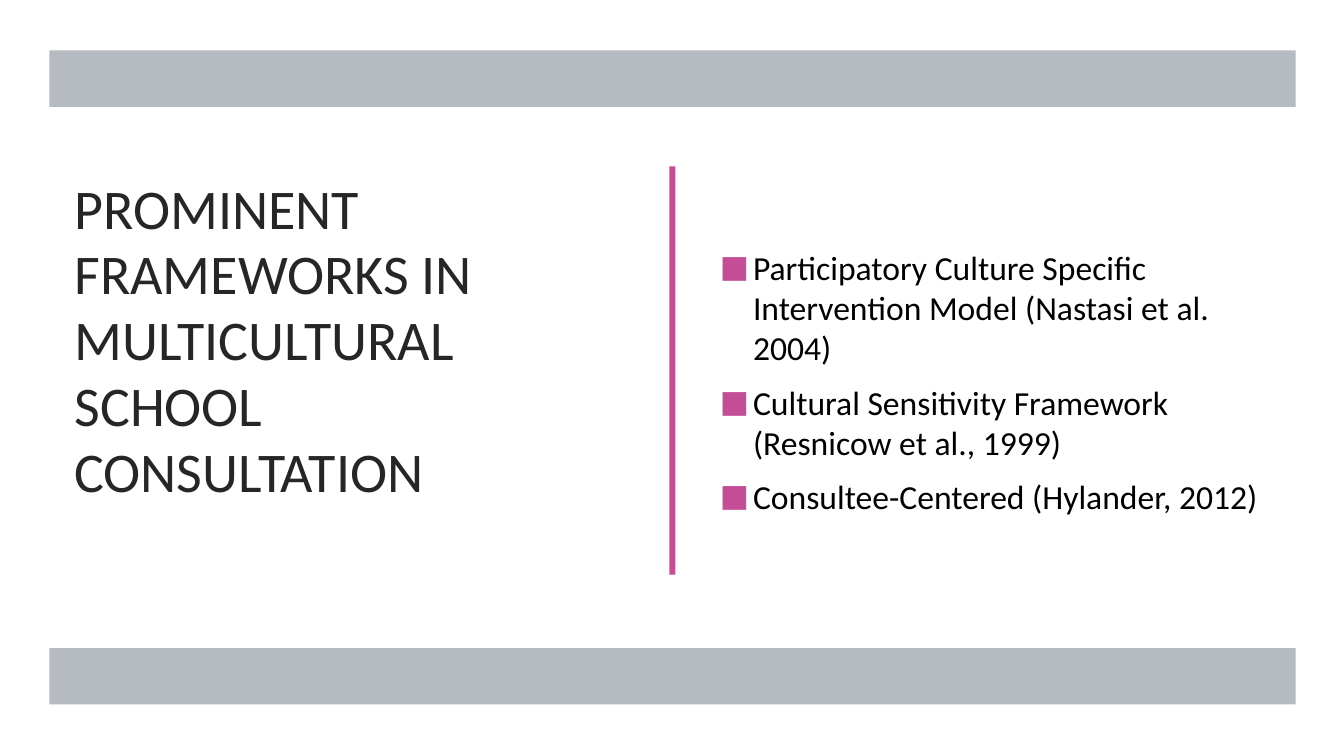
from lxml import etree
from pptx import Presentation
from pptx.dml.color import RGBColor
from pptx.enum.shapes import MSO_SHAPE
from pptx.enum.text import MSO_ANCHOR, PP_ALIGN
from pptx.oxml.ns import qn
from pptx.util import Pt

EMU_PER_PX = 9144
SLIDE_WIDTH, SLIDE_HEIGHT = 1333, 750
RECTANGLE = MSO_SHAPE.RECTANGLE
TOP, MIDDLE = MSO_ANCHOR.TOP, MSO_ANCHOR.MIDDLE
LEFT = PP_ALIGN.LEFT

FONT = "Calibri"
WHITE, BLACK, CHARCOAL = "FFFFFF", "000000", "262626"
GREY, PINK = "969FA7", "C34D97"

TITLE = "PROMINENT FRAMEWORKS IN MULTICULTURAL SCHOOL CONSULTATION"
FRAMEWORKS = [
    "Participatory Culture Specific Intervention Model (Nastasi et al. 2004)",
    "Cultural Sensitivity Framework (Resnicow et al., 1999)",
    "Consultee-Centered (Hylander, 2012)",
]


def px(length):
    """Turn pixels into EMU."""
    return length * EMU_PER_PX


def color(hex_string):
    """Turn a hex string into a colour."""
    return RGBColor.from_string(hex_string)


def add_rectangle(slide, box, fill, opacity=100):
    """Draw a borderless rectangle with the given opacity in percent."""
    shape = slide.shapes.add_shape(RECTANGLE, *map(px, box))
    shape.shadow.inherit = False
    shape.fill.solid()
    shape.fill.fore_color.rgb = color(fill)
    shape.line.fill.background()
    if opacity < 100:
        fill_color = shape.fill._xPr.find(qn("a:solidFill"))[0]
        etree.SubElement(fill_color, qn("a:alpha"), val=str(opacity * 1000))


def add_text_frame(slide, box, anchor, inset_top):
    """Add a wrapping text box and return its text frame."""
    frame = slide.shapes.add_textbox(*map(px, box)).text_frame
    frame.word_wrap = True
    frame.vertical_anchor = anchor
    frame.margin_left = frame.margin_right = px(10)
    frame.margin_top, frame.margin_bottom = px(inset_top), px(5)
    return frame


def add_run(paragraph, text, size, fill):
    """Add one styled run to a paragraph."""
    paragraph.alignment = LEFT
    run = paragraph.add_run()
    run.text = text
    run.font.name = FONT
    run.font.size = Pt(size)
    run.font.color.rgb = color(fill)


def set_bullet(paragraph):
    """Give a paragraph a hanging pink square bullet."""
    properties = paragraph._p.get_or_add_pPr()
    properties.set("marL", str(px(33)))
    properties.set("indent", str(-px(33)))
    bullet_color = etree.SubElement(properties, qn("a:buClr"))
    etree.SubElement(bullet_color, qn("a:srgbClr"), val=PINK)
    etree.SubElement(properties, qn("a:buSzPct"), val="92000")
    etree.SubElement(properties, qn("a:buFont"), typeface=FONT)
    etree.SubElement(properties, qn("a:buChar"), char="■")


def add_title(slide, box):
    """Place the title in the left column."""
    paragraph = add_text_frame(slide, box, TOP, 10).paragraphs[0]
    paragraph.line_spacing = 0.98
    add_run(paragraph, TITLE, 40, CHARCOAL)


def add_framework_list(slide, box):
    """Place the bulleted frameworks in the right column."""
    frame = add_text_frame(slide, box, MIDDLE, 5)
    for index, framework in enumerate(FRAMEWORKS):
        paragraph = frame.add_paragraph() if index else frame.paragraphs[0]
        set_bullet(paragraph)
        paragraph.space_before = Pt(4 if index else 0)
        paragraph.space_after = Pt(6)
        add_run(paragraph, framework, 24, BLACK)


def add_bands(slide, box, band_height):
    """Draw a grey band along the top and bottom of the box."""
    left, top, width, height = box
    for band_top in (top, top + height - band_height):
        add_rectangle(slide, (left, band_top, width, band_height), GREY, 70)


def add_content(slide, box):
    """Place the title, divider and list side by side in the box."""
    left, top, width, height = box
    list_width = 565
    add_title(slide, (left, top, 555, height))
    add_rectangle(slide, (left + 600, top, 6, 405), PINK)
    add_framework_list(slide, (left + width - list_width, top, list_width, height))


def main():
    """Build and save the presentation."""
    presentation = Presentation()
    presentation.slide_width = px(SLIDE_WIDTH)
    presentation.slide_height = px(SLIDE_HEIGHT)
    slide = presentation.slides.add_slide(presentation.slide_layouts[6])
    slide.background.fill.solid()
    slide.background.fill.fore_color.rgb = color(WHITE)
    add_bands(slide, (49, 50, 1236, 649), 56)
    add_content(slide, (64, 165, 1205, 427))
    presentation.save("out.pptx")


if __name__ == "__main__":
    main()
